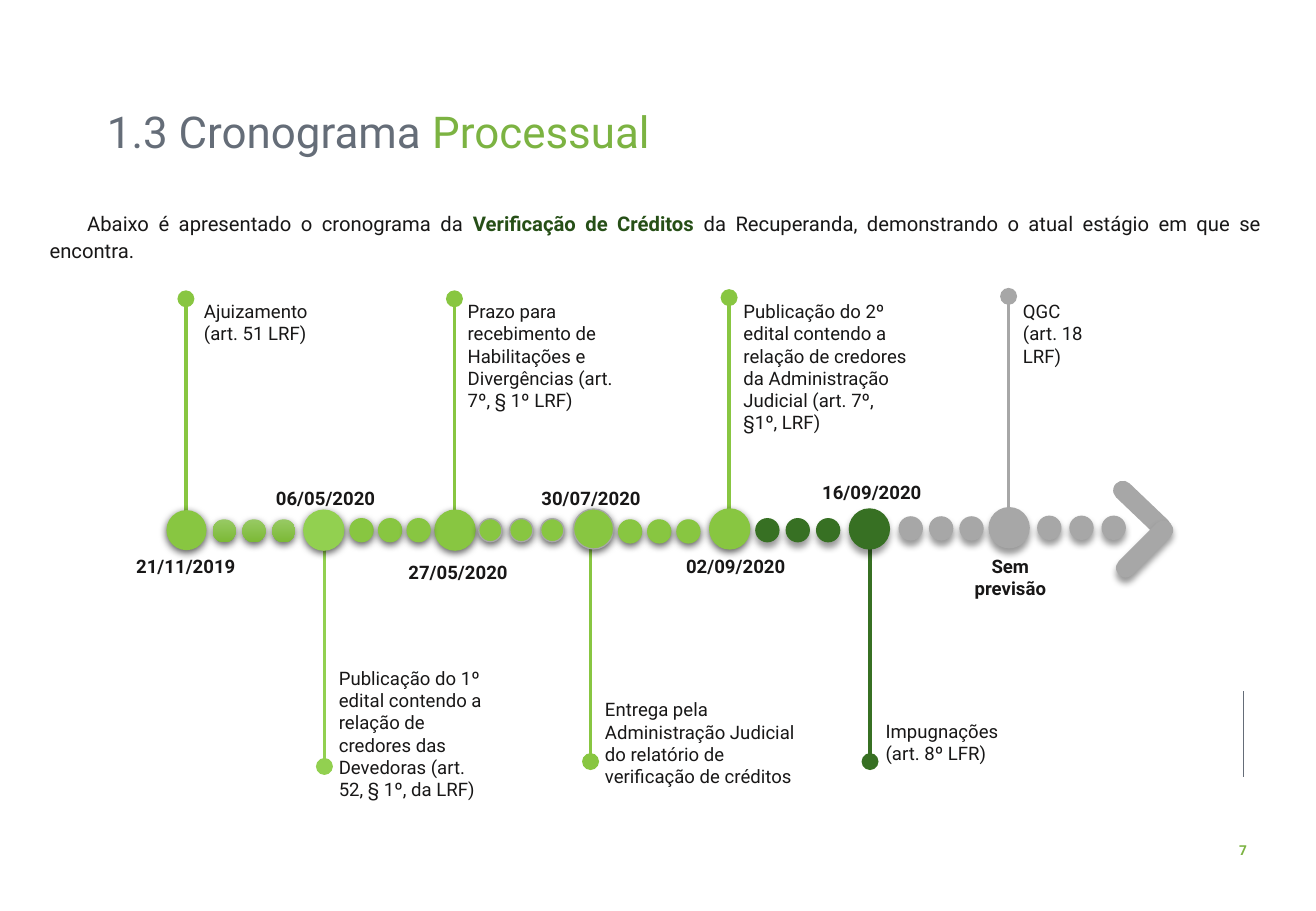
from dataclasses import dataclass

from lxml import etree
from pptx import Presentation
from pptx import util as u
from pptx.dml.color import RGBColor
from pptx.enum import shapes, text
from pptx.oxml.ns import qn

# Lengths are columns and rows of a square grid, ten cells to the inch
CELL = u.Inches(0.1)
COLUMNS, ROWS = 108.3, 75
BALL, DOT = 3.3, 1.9
DOTS_PER_STAGE = 3

FONT = "Roboto"
INK, SLATE, TITLE_GREEN, DEEP_GREEN = "181717", "656D78", "7CB342", "264F17"
GREEN, LIME, FOREST, GREY = "88C641", "92D050", "377023", "A7A7A7"
DOT_GRADIENT = ("98CA65", "7CB936")

Frame = tuple[float, float, float, float]


@dataclass(frozen=True)
class Shadow:
    opacity: int
    blur: float
    distance: float


SOFT, LOW = Shadow(63, 4.5, 1.5), Shadow(40, 4, 3)


@dataclass(frozen=True)
class Stage:
    date: str
    label: str
    centre: tuple[float, float]
    stem: tuple[float, float]  # column, row of the far end
    label_frame: Frame
    date_frame: Frame
    colour: str
    outline: str | None
    shadow: Shadow


@dataclass(frozen=True)
class DotRun:
    start: float
    pitch: float
    row: float
    fill: str | tuple[str, str]
    outline: str | None
    shadow: Shadow


STAGES = [
    Stage("21/11/2019", "Ajuizamento (art. 51 LRF)", (15.35, 43.65), (15.3, 24.6),
          (15.8, 24.2, 11.2, 4.7), (6.5, 45.2, 17.6, 2.9), GREEN, None, SOFT),
    Stage("06/05/2020", "Publicação do 1º edital contendo a relação de credores das "
          "Devedoras (art. 52, § 1º, da LRF)", (26.65, 43.65), (26.7, 63.1),
          (26.9, 54.4, 14.3, 8.4), (21.3, 39.6, 11, 2.9), LIME, LIME, SOFT),
    Stage("27/05/2020", "Prazo para recebimento de Habilitações e Divergências "
          "(art. 7º, § 1º LRF)", (37.45, 43.65), (37.4, 24.6),
          (37.5, 24.2, 16, 6.6), (32.5, 45.7, 10.4, 2.9), GREEN, GREEN, SOFT),
    Stage("30/07/2020", "Entrega pela Administração Judicial do relatório de "
          "verificação de créditos", (48.85, 43.55), (48.6, 62.7),
          (48.8, 57, 17.8, 6.6), (43.5, 39.6, 10.3, 2.9), GREEN, GREY, SOFT),
    Stage("02/09/2020", "Publicação do 2º edital contendo a relação de credores da "
          "Administração Judicial (art. 7º, §1º, LRF)", (60.05, 43.55), (60, 24.5),
          (60.2, 24.2, 15.7, 8.4), (55.2, 45.2, 10.7, 2.9), GREEN, GREEN, SOFT),
    Stage("16/09/2020", "Impugnações (art. 8º LFR)", (71.55, 43.55), (71.6, 62.7),
          (71.9, 58.8, 12.4, 4.7), (66.4, 39.1, 10.7, 2.9), FOREST, FOREST, LOW),
    Stage("Sem previsão", "QGC\n(art. 18 LRF)", (83.05, 43.45), (83, 24.4),
          (83.2, 24.2, 7.9, 4.7), (77.6, 45.2, 11.1, 2.9), GREY, GREY, LOW),
]

DOT_RUNS = [
    DotRun(18.45, 2.45, 43.7, DOT_GRADIENT, None, SOFT),
    DotRun(29.75, 2.35, 43.65, GREEN, GREEN, SOFT),
    DotRun(40.35, 2.55, 43.65, GREEN, GREY, SOFT),
    DotRun(51.85, 2.4, 43.75, GREEN, GREEN, SOFT),
    DotRun(63.15, 2.5, 43.65, FOREST, FOREST, LOW),
    DotRun(74.95, 2.5, 43.5, GREY, GREY, LOW),
    DotRun(86.35, 2.65, 43.45, GREY, GREY, LOW),
]


def cells(count: float) -> u.Emu:
    return u.Emu(round(count * CELL))


def rgb(colour: str) -> RGBColor:
    return RGBColor.from_string(colour)


def add_span(para, words: str, *, size: float, colour: str = INK, bold: bool = False) -> None:
    span = para.add_run()
    span.text = words
    span.font.name, span.font.size, span.font.bold = FONT, u.Pt(size), bold
    span.font.color.rgb = rgb(colour)


def add_text(page, frame: Frame, words: str = "", *, size: float = 11, colour: str = INK,
             bold: bool = False, align=text.PP_ALIGN.LEFT, wrap: bool = True):
    box = page.shapes.add_textbox(*map(cells, frame))
    body = box.text_frame
    body.word_wrap = wrap
    for index, line in enumerate(words.split("\n")):
        para = body.add_paragraph() if index else body.paragraphs[0]
        para.alignment = align
        if line:
            add_span(para, line, size=size, colour=colour, bold=bold)
    return box


def add_line(page, start: tuple[float, float], end: tuple[float, float], *,
             colour: str, width: float, oval_head: bool = False) -> None:
    line = page.shapes.add_connector(shapes.MSO_CONNECTOR.STRAIGHT,
                                     *map(cells, (*start, *end)))
    line.line.color.rgb = rgb(colour)
    line.line.width = u.Pt(width)
    properties = line._element.spPr
    if oval_head:
        etree.SubElement(properties.find(qn("a:ln")), qn("a:headEnd"),
                         type="oval", w="lg", len="lg")
    etree.SubElement(properties, qn("a:effectLst"))


def add_solid(page, kind, frame: Frame, *, fill: str | tuple[str, str],
              outline: str | None = None, shadow: Shadow | None = None):
    shape = page.shapes.add_shape(kind, *map(cells, frame))
    if isinstance(fill, tuple):
        shape.fill.gradient()
        shape.fill.gradient_angle = 270
        for stop, colour in zip(shape.fill.gradient_stops, fill):
            stop.color.rgb = rgb(colour)
    else:
        shape.fill.solid()
        shape.fill.fore_color.rgb = rgb(fill)
    if outline:
        shape.line.color.rgb = rgb(outline)
        shape.line.width = u.Pt(0.75)
    else:
        shape.line.fill.background()
    shape.shadow.inherit = False
    if shadow:
        effects = shape._element.spPr.find(qn("a:effectLst"))
        outer = etree.SubElement(effects, qn("a:outerShdw"), blurRad=str(u.Pt(shadow.blur)),
                                 dist=str(u.Pt(shadow.distance)), dir="5400000", rotWithShape="0")
        tint = etree.SubElement(outer, qn("a:srgbClr"), val="000000")
        etree.SubElement(tint, qn("a:alpha"), val=str(shadow.opacity * 1000))
    return shape


def add_circle(page, column: float, row: float, size: float, **style) -> None:
    frame = (column - size / 2, row - size / 2, size, size)
    add_solid(page, shapes.MSO_SHAPE.OVAL, frame, **style)


def main() -> None:
    deck = Presentation()
    deck.slide_width, deck.slide_height = cells(COLUMNS), cells(ROWS)
    page = deck.slides.add_slide(deck.slide_layouts[5])

    # Title
    title = page.shapes.title
    title.left, title.top, title.width, title.height = map(cells, (7.8, 8.6, 81.8, 5.3))
    title.text_frame.auto_size = text.MSO_AUTO_SIZE.NONE
    title.text_frame.vertical_anchor = text.MSO_ANCHOR.TOP
    para = title.text_frame.paragraphs[0]
    para.alignment, para.line_spacing = text.PP_ALIGN.LEFT, 0.9
    add_span(para, "1.3 Cronograma ", size=26, colour=SLATE)
    add_span(para, "Processual", size=26, colour=TITLE_GREEN)

    # Introduction
    intro = add_text(page, (3.1, 16.6, 101.7, 3.2), align=text.PP_ALIGN.JUSTIFY)
    para = intro.text_frame.paragraphs[0]
    para.line_spacing = 1.14
    para._p.get_or_add_pPr().set("indent", str(cells(3.1)))
    add_span(para, "Abaixo é apresentado o cronograma da ", size=12)
    add_span(para, "Verificação de Créditos ", size=12, colour=DEEP_GREEN, bold=True)
    add_span(para, "da Recuperanda, demonstrando o atual estágio em que se encontra.", size=12)

    # Timeline: stems and stages, then the dots between them
    for stage in STAGES:
        add_line(page, stage.stem, (stage.stem[0], stage.centre[1]),
                 colour=stage.colour, width=2, oval_head=True)
        add_circle(page, *stage.centre, BALL, fill=stage.colour,
                   outline=stage.outline, shadow=stage.shadow)
        add_text(page, stage.label_frame, stage.label)
        add_text(page, stage.date_frame, stage.date, bold=True, align=text.PP_ALIGN.CENTER)
    for run in DOT_RUNS:
        for index in range(DOTS_PER_STAGE):
            add_circle(page, run.start + index * run.pitch, run.row, DOT,
                       fill=run.fill, outline=run.outline, shadow=run.shadow)

    # Arrowhead at the end of the timeline
    for left, top, angle, shadow in ((91, 41.1, 43.7, None), (91.2, 44.4, 315, LOW)):
        bar = add_solid(page, shapes.MSO_SHAPE.ROUNDED_RECTANGLE, (left, top, 6, 1.6),
                        fill=GREY, shadow=shadow)
        bar.adjustments[0] = 0.5
        bar.rotation = angle

    # Margin rule and page number
    add_line(page, (102.3, 56.9), (102.3, 64), colour=SLATE, width=0.5)
    add_text(page, (100.6, 68.8, 3.4, 2.4), "7", size=8.1, colour=TITLE_GREEN, bold=True,
             align=text.PP_ALIGN.CENTER, wrap=False)

    deck.save("out.pptx")


if __name__ == "__main__":
    main()
